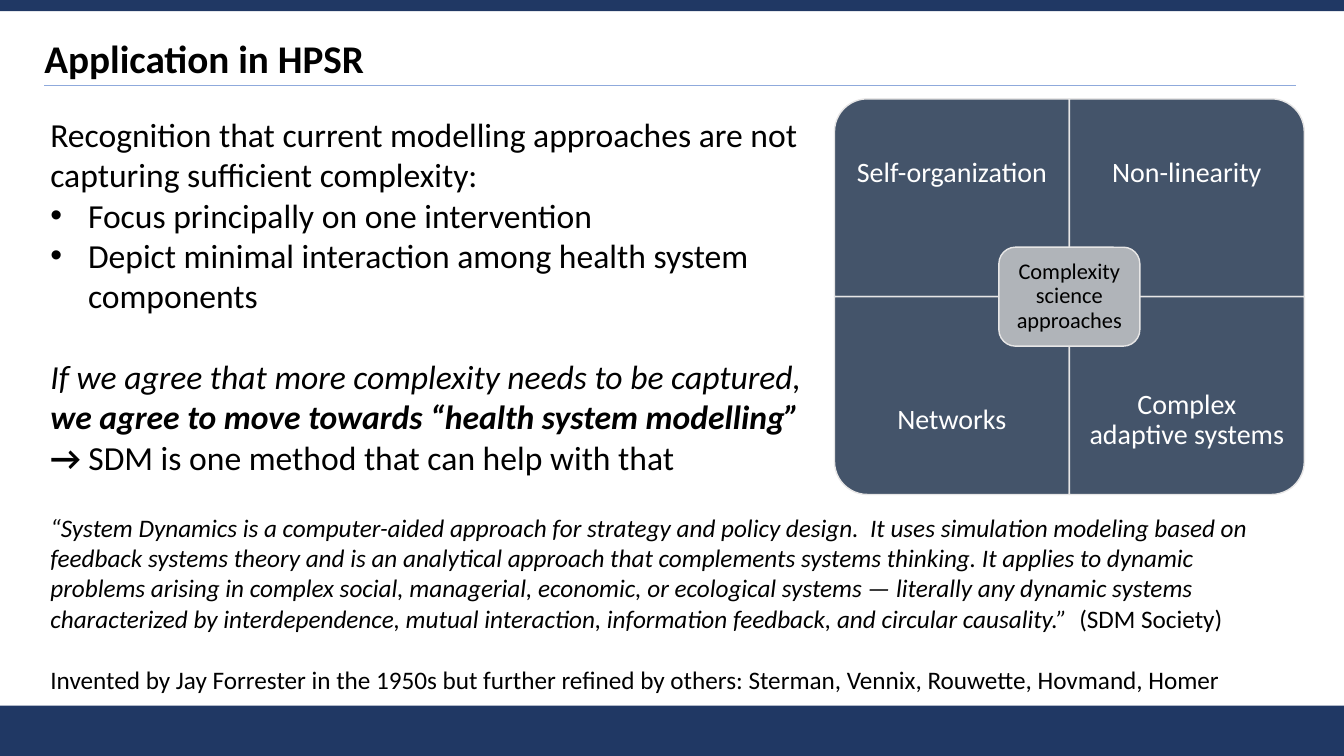
from lxml import etree
from pptx import Presentation
from pptx.dml.color import RGBColor
from pptx.enum.shapes import MSO_CONNECTOR, MSO_SHAPE
from pptx.enum.text import MSO_ANCHOR, PP_ALIGN
from pptx.oxml.ns import qn
from pptx.util import Cm, Pt

RECT = MSO_SHAPE.RECTANGLE
CORNER = MSO_SHAPE.ROUND_1_RECTANGLE
ROUND = MSO_SHAPE.ROUNDED_RECTANGLE
STRAIGHT = MSO_CONNECTOR.STRAIGHT
TOP, MIDDLE = MSO_ANCHOR.TOP, MSO_ANCHOR.MIDDLE
LEFT, CENTER = PP_ALIGN.LEFT, PP_ALIGN.CENTER
FONT = "Calibri"
NAVY, SLATE, GREY, EDGE, RULE = "203864", "44546A", "B0B4B9", "E7E6E6", "8FAADC"
BLACK, WHITE = "000000", "FFFFFF"
WIDE, HIGH = 33.87, 19.05


def color(code):
    return RGBColor.from_string(code)


def add_run(para, text, size, ink=BLACK, bold=False, italic=False):
    run = para.add_run()
    run.text = text
    font = run.font
    font.name, font.size = FONT, Pt(size)
    font.bold, font.italic = bold, italic
    font.color.rgb = color(ink)


def add_bullet(para):
    props = para._p.get_or_add_pPr()
    props.set("marL", str(Cm(0.95)))
    props.set("indent", str(-Cm(0.95)))
    etree.SubElement(props, qn("a:buFont")).set("typeface", "Arial")
    etree.SubElement(props, qn("a:buChar")).set("char", "•")


def set_frame(frame, pads, anchor):
    frame.word_wrap = True
    frame.vertical_anchor = anchor
    (frame.margin_left, frame.margin_top,
     frame.margin_right, frame.margin_bottom) = [Cm(pad) for pad in pads]


def add_box(slide, kind, box, fill, line=None):
    shape = slide.shapes.add_shape(kind, *[Cm(n) for n in box])
    shape.shadow.inherit = False
    shape.fill.solid()
    shape.fill.fore_color.rgb = color(fill)
    if line:
        shape.line.color.rgb = color(line)
        shape.line.width = Pt(1)
    else:
        shape.line.fill.background()
    return shape


def add_label(frame, text, size, ink, pad):
    set_frame(frame, [pad] * 4, MIDDLE)
    para = frame.paragraphs[0]
    para.alignment, para.line_spacing = CENTER, 0.9
    add_run(para, text, size, ink)


def add_body(slide, box, size, paras):
    """Each paragraph is (bulleted, space before, [(text, bold, italic)])."""
    frame = slide.shapes.add_textbox(*[Cm(n) for n in box]).text_frame
    set_frame(frame, (0.25, 0.13, 0.25, 0.13), TOP)
    for i, (dot, gap, runs) in enumerate(paras):
        para = frame.add_paragraph() if i else frame.paragraphs[0]
        if gap:
            para.space_before = Pt(gap)
        if dot:
            add_bullet(para)
        for text, bold, italic in runs:
            add_run(para, text, size, bold=bold, italic=italic)


def add_bands(slide, width, height):
    add_box(slide, RECT, (0, height - 1.27, width, 1.27), NAVY)
    add_box(slide, RECT, (0, 0, width, 0.28), NAVY)


def add_title(slide, left, top, width, height):
    base = Cm(top + height - 0.03)
    rule = slide.shapes.add_connector(
        STRAIGHT, Cm(left), base, Cm(left + width), base)
    rule.line.color.rgb = color(RULE)
    rule.line.width = Pt(1)
    etree.SubElement(rule._element.spPr, qn("a:effectLst"))

    title = slide.shapes.title
    title.left, title.top = Cm(left), Cm(top)
    title.width, title.height = Cm(width), Cm(height)
    set_frame(title.text_frame, (0, 0.13, 0.25, 0.13), MIDDLE)
    para = title.text_frame.paragraphs[0]
    para.alignment = LEFT
    add_run(para, "Application in HPSR", 28, bold=True)


def add_matrix(slide, left, top, width, height):
    """Four tiles, each turned so its round corner faces out, and a hub."""
    wide, high = width / 2, height / 2
    tiles = [("Self-organization", 270), ("Non-linearity", 0),
             ("Networks", 180), ("Complex adaptive systems", 90)]
    for i, (text, turn) in enumerate(tiles):
        row, col = divmod(i, 2)
        x, y = left + col * wide, top + row * high
        w, h = (high, wide) if turn % 180 else (wide, high)
        tile = add_box(slide, CORNER,
                       (x + (wide - w) / 2, y + (high - h) / 2, w, h),
                       SLATE, EDGE)
        tile.rotation = turn
        label = slide.shapes.add_textbox(
            Cm(x), Cm(y + row * high / 4), Cm(wide), Cm(high * 0.75))
        add_label(label.text_frame, text, 20, WHITE, 0.4)

    w, h = wide * 0.6, high / 2
    hub = add_box(slide, ROUND, (left + wide - w / 2, top + high - h / 2, w, h),
                  GREY, EDGE)
    add_label(hub.text_frame, "Complexity science approaches", 16, BLACK, 0.18)


POINTS = [
    (False, 0, [("Recognition that current modelling approaches are not "
                 "capturing sufficient complexity:", False, False)]),
    (True, 0, [("Focus principally on one intervention", False, False)]),
    (True, 0, [("Depict minimal interaction among health system components",
                False, False)]),
    (False, 29, [
        ("If we agree that more complexity needs to be captured, ", False, True),
        ("we agree to move towards “health system modelling” ", True, True),
        ("→ ", True, False),
        ("SDM is one method that can help with that", False, False)]),
]
QUOTE = [
    (False, 0, [
        ("“System Dynamics is a computer-aided approach for strategy and "
         "policy design.  It uses simulation modeling based on feedback "
         "systems theory and is an analytical approach that complements "
         "systems thinking. It applies to dynamic problems arising in complex "
         "social, managerial, economic, or ecological systems — literally any "
         "dynamic systems characterized by interdependence, mutual "
         "interaction, information feedback, and circular causality.”  ",
         False, True),
        ("(SDM Society)", False, False)]),
    (False, 22, [("Invented by Jay Forrester in the 1950s but further refined "
                  "by others: Sterman, Vennix, Rouwette, Hovmand, Homer",
                  False, False)]),
]


def main():
    deck = Presentation()
    deck.slide_width, deck.slide_height = Cm(WIDE), Cm(HIGH)
    slide = deck.slides.add_slide(deck.slide_layouts[5])
    add_bands(slide, WIDE, HIGH)
    add_title(slide, 1.12, 0.74, 31.55, 1.45)
    add_body(slide, (1.02, 2.74, 19.53, 9.5), 24, POINTS)
    add_body(slide, (1.02, 12.78, 31.85, 5.64), 18, QUOTE)
    add_matrix(slide, 21.03, 2.49, 11.84, 9.97)
    deck.save("out.pptx")


if __name__ == "__main__":
    main()
